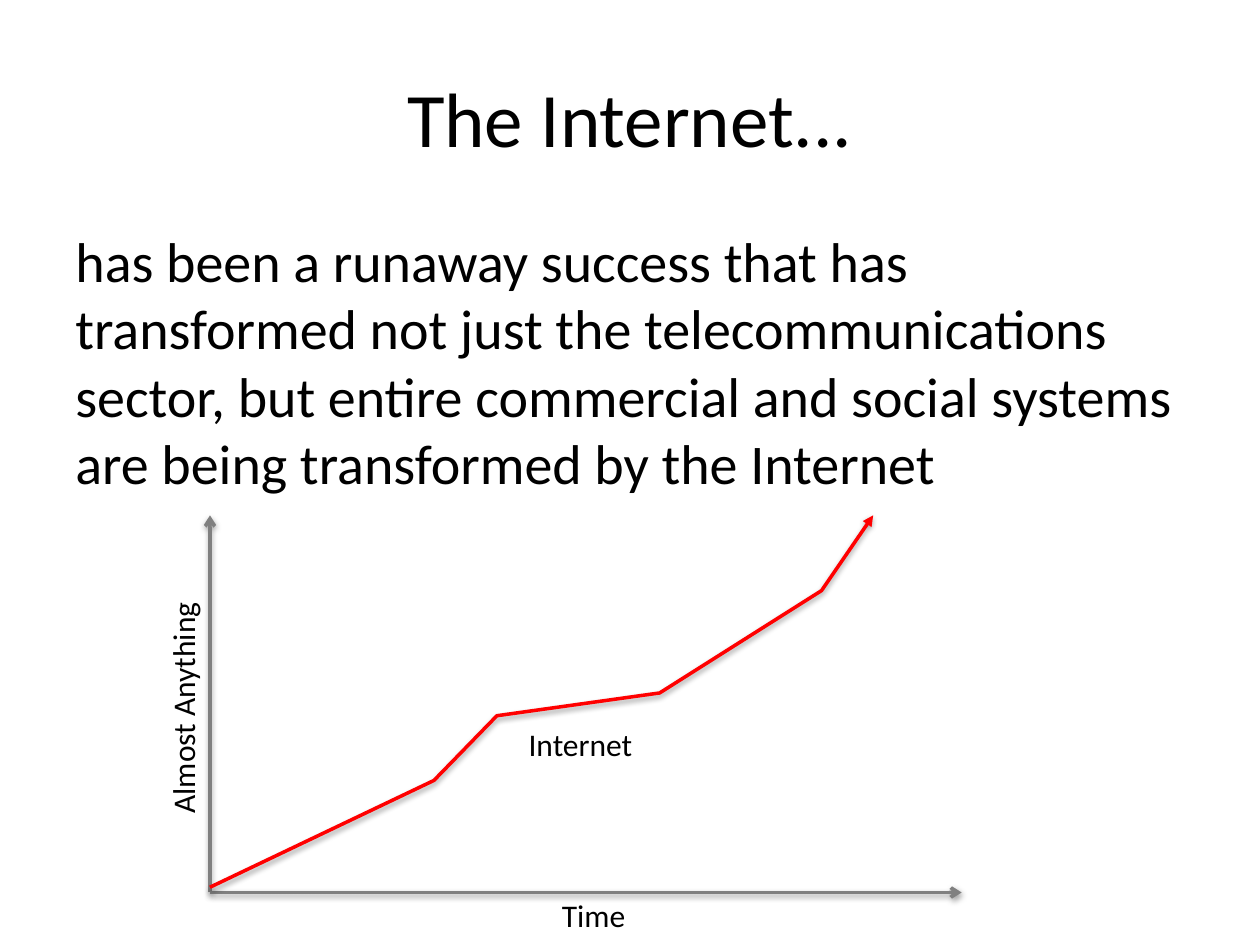
from dataclasses import dataclass

from lxml.etree import SubElement
from pptx import Presentation
from pptx.dml.color import RGBColor
from pptx.enum.shapes import MSO_CONNECTOR
from pptx.enum.text import MSO_ANCHOR, MSO_AUTO_SIZE, PP_ALIGN
from pptx.oxml import parse_xml
from pptx.oxml.ns import nsdecls, qn
from pptx.util import Pt


@dataclass(frozen=True)
class Theme:
    font: str = "Calibri"
    text: RGBColor = RGBColor(0x00, 0x00, 0x00)
    axis: RGBColor = RGBColor(0x80, 0x80, 0x80)
    curve: RGBColor = RGBColor(0xFF, 0x00, 0x00)
    title_size: int = 44
    body_size: int = 32
    label_size: int = 18
    line_width: int = 2


THEME = Theme()

# Chart geometry, in points
ORIGIN = (120, 510)
AXIS_TOP = 294.5
AXIS_RIGHT = 549.5
GROWTH = [(120, 507), (248, 446), (284, 409), (377, 396), (469.5, 337.5), (499, 294.5)]

SHADOW = (
    f'<a:effectLst {nsdecls("a")}>'
    '<a:outerShdw blurRad="40000" dist="20000" dir="5400000" rotWithShape="0">'
    '<a:srgbClr val="000000"><a:alpha val="38000"/></a:srgbClr>'
    "</a:outerShdw></a:effectLst>"
)


def write_text(frame, text, size, align=PP_ALIGN.LEFT):
    frame.text = text
    paragraph = frame.paragraphs[0]
    paragraph.alignment = align
    paragraph.font.name = THEME.font
    paragraph.font.size = Pt(size)
    paragraph.font.color.rgb = THEME.text


def add_title(slide, text):
    title = slide.shapes.title
    title.left, title.top, title.width, title.height = Pt(36), Pt(21.6), Pt(648), Pt(90)
    title.text_frame.vertical_anchor = MSO_ANCHOR.MIDDLE
    write_text(title.text_frame, text, THEME.title_size, PP_ALIGN.CENTER)


def add_body(slide, text):
    body = slide.shapes.add_textbox(Pt(36), Pt(126), Pt(648), Pt(356.4))
    body.text_frame.word_wrap = True
    write_text(body.text_frame, text, THEME.body_size)


def add_label(slide, text, left, top, width, rotation=0):
    label = slide.shapes.add_textbox(Pt(left), Pt(top), Pt(width), Pt(29))
    label.rotation = rotation
    label.text_frame.word_wrap = False
    label.text_frame.auto_size = MSO_AUTO_SIZE.SHAPE_TO_FIT_TEXT
    write_text(label.text_frame, text, THEME.label_size)


def style_arrow(arrow, color, head):
    """Line colour and width, an arrowhead at the end, and a soft shadow."""
    arrow.line.color.rgb = color
    arrow.line.width = Pt(THEME.line_width)
    SubElement(arrow.line._get_or_add_ln(), qn("a:tailEnd"), type=head)
    arrow._element.spPr.append(parse_xml(SHADOW))


def add_axis(slide, end):
    points = [Pt(value) for value in (*ORIGIN, *end)]
    axis = slide.shapes.add_connector(MSO_CONNECTOR.STRAIGHT, *points)
    style_arrow(axis, THEME.axis, "arrow")


def add_curve(slide, points):
    start, *rest = [(Pt(x), Pt(y)) for x, y in points]
    builder = slide.shapes.build_freeform(*start)
    builder.add_line_segments(rest, close=False)
    curve = builder.convert_to_shape()
    curve.fill.background()
    style_arrow(curve, THEME.curve, "triangle")


def main():
    deck = Presentation()
    deck.slide_width, deck.slide_height = Pt(720), Pt(540)
    slide = deck.slides.add_slide(deck.slide_layouts[5])

    # Statement
    add_title(slide, "The Internet...")
    add_body(
        slide,
        "has been a runaway success that has transformed not just the "
        "telecommunications sector, but entire commercial and social systems "
        "are being transformed by the Internet",
    )

    # Growth sketch
    add_axis(slide, (ORIGIN[0], AXIS_TOP))
    add_axis(slide, (AXIS_RIGHT, ORIGIN[1]))
    add_curve(slide, GROWTH)

    # Labels
    add_label(slide, "Time", 314, 508.5, 51)
    add_label(slide, "Almost Anything", 36, 389, 137, rotation=270)
    add_label(slide, "Internet", 295, 410.5, 75)

    deck.save("out.pptx")


if __name__ == "__main__":
    main()
